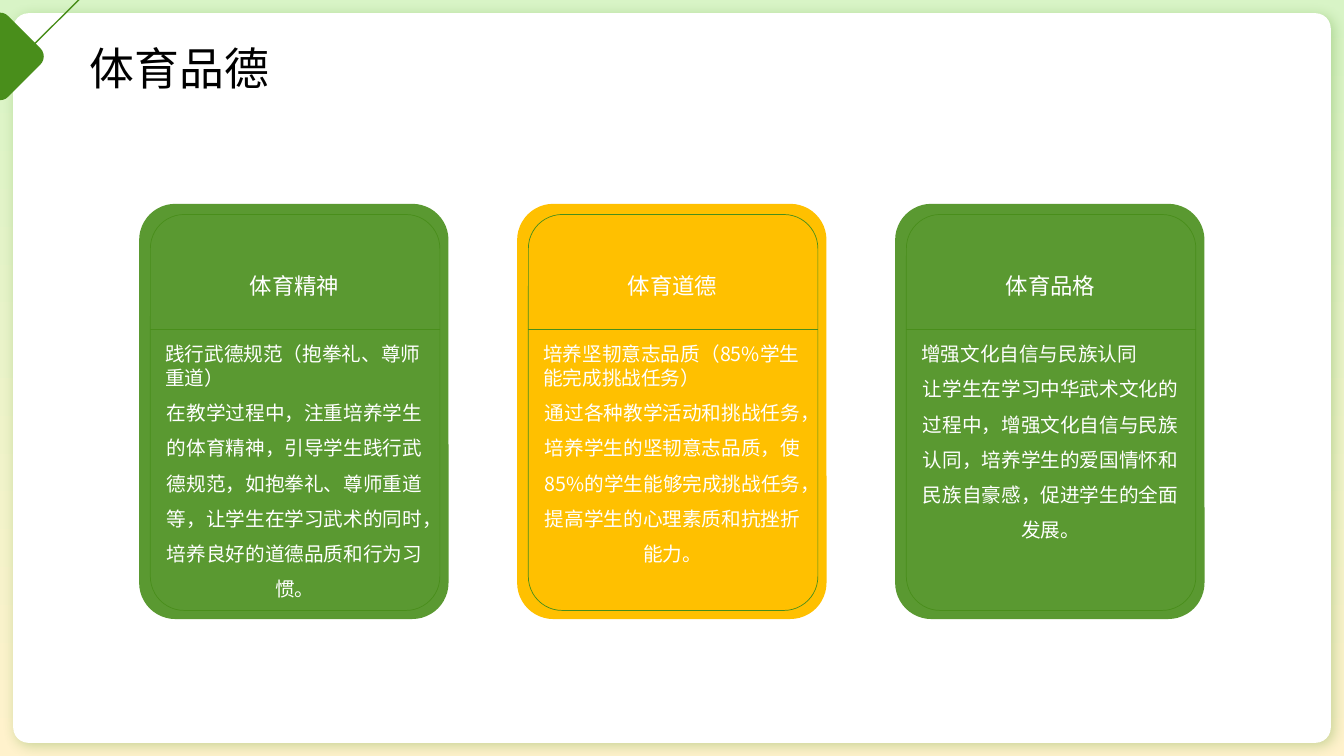
from math import cos, radians, sin

from lxml import etree
from pptx import Presentation
from pptx.dml.color import RGBColor
from pptx.enum.shapes import MSO_CONNECTOR, MSO_SHAPE
from pptx.enum.text import MSO_ANCHOR, MSO_AUTO_SIZE, PP_ALIGN
from pptx.oxml.ns import qn
from pptx.util import Pt

RECTANGLE, ROUNDED = MSO_SHAPE.RECTANGLE, MSO_SHAPE.ROUNDED_RECTANGLE
LEFT, CENTER = PP_ALIGN.LEFT, PP_ALIGN.CENTER
TOP, MIDDLE = MSO_ANCHOR.TOP, MSO_ANCHOR.MIDDLE

THEME = {
    "font": "Noto Sans CJK SC",
    "green": RGBColor(0x49, 0x8E, 0x1B),
    "gold": RGBColor(0xFF, 0xC0, 0x00),
    "cream": RGBColor(0xFF, 0xF2, 0xCC),
    "mint": RGBColor(0xD8, 0xF4, 0xC6),
    "white": RGBColor(0xFF, 0xFF, 0xFF),
    "black": RGBColor(0x00, 0x00, 0x00),
    "title": 32, "heading": 16, "body": 14,
}
CARDS = [
    ("体育精神", "green", "践行武德规范（抱拳礼、尊师重道）",
     "在教学过程中，注重培养学生的体育精神，引导学生践行武德规范，如抱拳礼、"
     "尊师重道等，让学生在学习武术的同时，培养良好的道德品质和行为习惯。"),
    ("体育道德", "gold", "培养坚韧意志品质（85%学生能完成挑战任务）",
     "通过各种教学活动和挑战任务，培养学生的坚韧意志品质，使85%的学生能够"
     "完成挑战任务，提高学生的心理素质和抗挫折能力。"),
    ("体育品格", "green", "增强文化自信与民族认同",
     "让学生在学习中华武术文化的过程中，增强文化自信与民族认同，培养学生的"
     "爱国情怀和民族自豪感，促进学生的全面发展。"),
]


def add_panel(kind, left, top, width, height, fill=None, line=None, radius=None, opacity=100):
    panel = page.shapes.add_shape(kind, Pt(left), Pt(top), Pt(width), Pt(height))
    panel.shadow.inherit = False
    if radius is not None:
        panel.adjustments[0] = radius
    if fill is None:
        panel.fill.background()
    else:
        panel.fill.solid()
        panel.fill.fore_color.rgb = THEME[fill]
    if opacity < 100:
        color = panel._element.spPr.find(".//" + qn("a:srgbClr"))
        etree.SubElement(color, qn("a:alpha"), val=str(opacity * 1000))
    if line is None:
        panel.line.fill.background()
    else:
        panel.line.color.rgb = THEME[line]
        panel.line.width = Pt(0.5)
    return panel


def write(box, lines, size, color, anchor=TOP):
    """Fill a box with (text, alignment, line height) paragraphs."""
    frame = box.text_frame
    frame.word_wrap = True
    frame.auto_size = MSO_AUTO_SIZE.NONE
    frame.vertical_anchor = anchor
    frame.margin_left = frame.margin_top = frame.margin_right = frame.margin_bottom = 0
    for index, (text, align, height) in enumerate(lines):
        para = frame.paragraphs[0] if index == 0 else frame.add_paragraph()
        para.alignment = align
        para.line_spacing = Pt(height)
        para.space_before = para.space_after = Pt(0)
        span = para.add_run()
        span.text = text
        span.font.size = Pt(THEME[size])
        span.font.color.rgb = THEME[color]
        span.font.name = THEME["font"]
        etree.SubElement(span._r.get_or_add_rPr(), qn("a:ea"), typeface=THEME["font"])


deck = Presentation()
deck.slide_width, deck.slide_height = Pt(960), Pt(540)
page = deck.slides.add_slide(deck.slide_layouts[5])

# Gradient backdrop
backdrop = add_panel(RECTANGLE, 0, 0, 960, 540, fill="cream")
backdrop.fill.gradient()
backdrop.fill.gradient_angle = 90
for stop, name, position in zip(backdrop.fill.gradient_stops, ("cream", "mint"), (0, 1)):
    stop.color.rgb = THEME[name]
    stop.position = position

# White sheet with a soft green shadow
sheet = add_panel(ROUNDED, 9.4, 9.4, 941.2, 521.2, fill="white", radius=0.021)
effects = sheet._element.spPr.find(qn("a:effectLst"))
shadow = etree.SubElement(effects, qn("a:outerShdw"), blurRad=str(Pt(10)), dist=str(Pt(3)),
                          dir="2700000", algn="tl", rotWithShape="0")
shade = etree.SubElement(shadow, qn("a:srgbClr"), val=str(THEME["green"]))
etree.SubElement(shade, qn("a:alpha"), val="30000")

# Cards
for column, (heading, color, lead, detail) in enumerate(CARDS):
    left = 99.4 + column * 270
    add_panel(ROUNDED, left, 145.6, 221, 296.6, fill=color, radius=0.117,
              opacity=90 if color == "green" else 100)
    add_panel(ROUNDED, left + 8, 153.2, 206.8, 282.8, line="green", radius=0.117)
    divider = page.shapes.add_connector(MSO_CONNECTOR.STRAIGHT, Pt(left + 215), Pt(235.6),
                                        Pt(left + 8), Pt(235.6))
    divider.line.color.rgb = THEME["green"]
    divider.line.width = Pt(0.5)
    etree.SubElement(divider._element.spPr, qn("a:effectLst"))
    heading_box = page.shapes.add_textbox(Pt(left + 18.6), Pt(164.2), Pt(185), Pt(67))
    write(heading_box, [(heading, CENTER, 32)], "heading", "white", MIDDLE)
    body_box = page.shapes.add_textbox(Pt(left + 18.6), Pt(244), Pt(185), Pt(180))
    write(body_box, [(lead, LEFT, 17), (detail, CENTER, 25.2)], "body", "white")

# Corner ornament: outlined wedge with a round tip, then a solid diamond
tip = [(4.6 + 20.8 * cos(radians(angle)), 22 + 20.8 * sin(radians(angle)))
       for angle in range(45, 136, 10)]
builder = page.shapes.build_freeform(Pt(59.8), Pt(-3.6))
builder.add_line_segments([(Pt(x), Pt(y)) for x, y in tip] + [(Pt(-51), Pt(-3.6))], close=True)
wedge = builder.convert_to_shape()
wedge.shadow.inherit = False
wedge.fill.background()
wedge.line.color.rgb = THEME["green"]
wedge.line.width = Pt(1)
diamond = add_panel(ROUNDED, -24.5, 15.8, 49, 49, fill="green", radius=0.167)
diamond.rotation = 45

# Title, brought in front of the sheet
title = page.shapes.title
title.left, title.top, title.width, title.height = Pt(64), Pt(18.7), Pt(612.7), Pt(33.8)
write(title, [("体育品德", LEFT, 64)], "title", "black", MIDDLE)
page.shapes._spTree.append(title._element)

deck.save("out.pptx")
